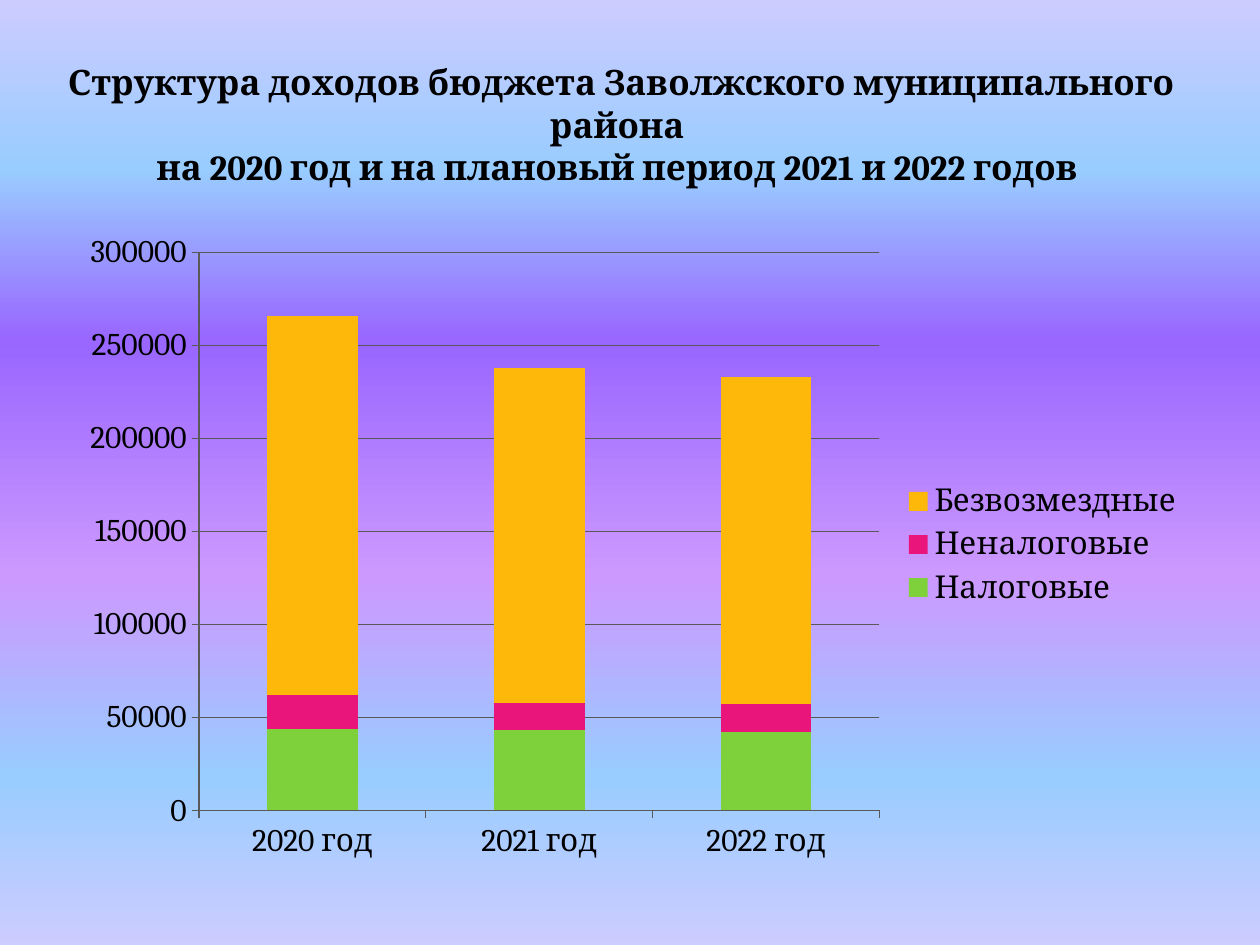
"""Build a slide with a stacked column chart of district budget revenues."""
import lxml.etree
import pptx
import pptx.chart.data
import pptx.dml.color
import pptx.enum.chart
import pptx.enum.text
import pptx.oxml
import pptx.oxml.ns
import pptx.util

EMU_PER_PX = 914400 // 126
COLORS = {
    "text": "000000",
    "axis": "595959",
    "tax": "7FD13B",
    "non_tax": "EA157A",
    "grants": "FEB80A",
    "lavender": "CCCCFF",
    "sky": "99CCFF",
    "violet": "9966FF",
    "orchid": "CC99FF",
}
BACKGROUND = [(0, "lavender"), (18, "sky"), (36, "violet"),
              (61, "orchid"), (82, "sky"), (100, "lavender")]
YEARS = ["2020 год", "2021 год", "2022 год"]
REVENUES = [
    ("Налоговые", "tax", (44000, 43000, 42000)),
    ("Неналоговые", "non_tax", (18000, 15000, 15000)),
    ("Безвозмездные", "grants", (204000, 180000, 176000)),
]
PLOT_LAYOUT = {"x": 0.12, "y": 0.05, "w": 0.6, "h": 0.86}


def px(*lengths):
    return [pptx.util.Emu(n * EMU_PER_PX) for n in lengths]


def rgb(name):
    return pptx.dml.color.RGBColor.from_string(COLORS[name])


class Deck:
    def __init__(self, width, height, font):
        self.prs = pptx.Presentation()
        self.prs.slide_width, self.prs.slide_height = px(width, height)
        self.font = font
        self.s = self.prs.slides.add_slide(self.prs.slide_layouts[5])

    def style(self, font, size, bold=False):
        font.name = self.font
        font.size = pptx.util.Pt(size)
        font.bold = bold
        font.color.rgb = rgb("text")

    def background(self, stops):
        fill = self.s.background.fill
        fill.gradient()
        fill.gradient_angle = 270
        gs_lst = self.s.element.find(".//" + pptx.oxml.ns.qn("a:gsLst"))
        for gs in list(gs_lst):
            gs_lst.remove(gs)
        for percent, name in stops:
            gs = lxml.etree.SubElement(gs_lst, pptx.oxml.ns.qn("a:gs"), pos=str(percent * 1000))
            lxml.etree.SubElement(gs, pptx.oxml.ns.qn("a:srgbClr"), val=COLORS[name])

    def title(self, text, box, size):
        sp = self.s.shapes.title
        sp.left, sp.top, sp.width, sp.height = px(*box)
        tf = sp.text_frame
        tf.word_wrap = True
        tf.auto_size = pptx.enum.text.MSO_AUTO_SIZE.NONE
        tf.vertical_anchor = pptx.enum.text.MSO_ANCHOR.MIDDLE
        p = tf.paragraphs[0]
        p.text = text
        p.alignment = pptx.enum.text.PP_ALIGN.CENTER
        self.style(p.font, size, bold=True)

    def stacked_columns(self, categories, series, box, size, layout):
        data = pptx.chart.data.CategoryChartData()
        data.categories = categories
        for name, _, values in series:
            data.add_series(name, values)
        kind = pptx.enum.chart.XL_CHART_TYPE.COLUMN_STACKED
        chart = self.s.shapes.add_chart(kind, *px(*box), data).chart
        chart.has_title = False
        self.style(chart.font, size)

        plot = chart.plots[0]
        plot.vary_by_categories = False
        plot.gap_width = 150
        plot.overlap = 100
        for ser, (_, color, _) in zip(plot.series, series):
            ser.format.fill.solid()
            ser.format.fill.fore_color.rgb = rgb(color)

        chart.has_legend = True
        chart.legend.position = pptx.enum.chart.XL_LEGEND_POSITION.RIGHT
        chart.legend.include_in_layout = False

        value_axis, category_axis = chart.value_axis, chart.category_axis
        value_axis.minimum_scale = 0
        value_axis.maximum_scale = 300000
        value_axis.major_unit = 50000
        value_axis.has_major_gridlines = True
        for axis in (value_axis, category_axis):
            axis.major_tick_mark = pptx.enum.chart.XL_TICK_MARK.OUTSIDE
        for part in (value_axis, category_axis, value_axis.major_gridlines):
            part.format.line.color.rgb = rgb("axis")
            part.format.line.width = pptx.util.Pt(0.75)
        self.place_plot(chart, layout)

    def place_plot(self, chart, layout):
        qn = pptx.oxml.ns.qn
        area = chart.element.find(".//" + qn("c:plotArea"))
        for old in area.findall(qn("c:layout")):
            area.remove(old)
        outer = lxml.etree.Element(qn("c:layout"))
        manual = lxml.etree.SubElement(outer, qn("c:manualLayout"))
        lxml.etree.SubElement(manual, qn("c:layoutTarget"), val="inner")
        for axis in "xy":
            lxml.etree.SubElement(manual, qn(f"c:{axis}Mode"), val="edge")
        for key, share in layout.items():
            lxml.etree.SubElement(manual, qn(f"c:{key}"), val=str(share))
        area.insert(0, outer)


def main():
    deck = Deck(1260, 945, "Cambria")
    deck.background(BACKGROUND)
    deck.title("Структура доходов бюджета Заволжского муниципального района \v"
               "на 2020 год и на плановый период 2021 и 2022 годов ",
               (54, 45, 1134, 158), 20)
    deck.stacked_columns(YEARS, REVENUES, (63, 220, 1134, 649), 18, PLOT_LAYOUT)
    deck.prs.save("out.pptx")


if __name__ == "__main__":
    main()
